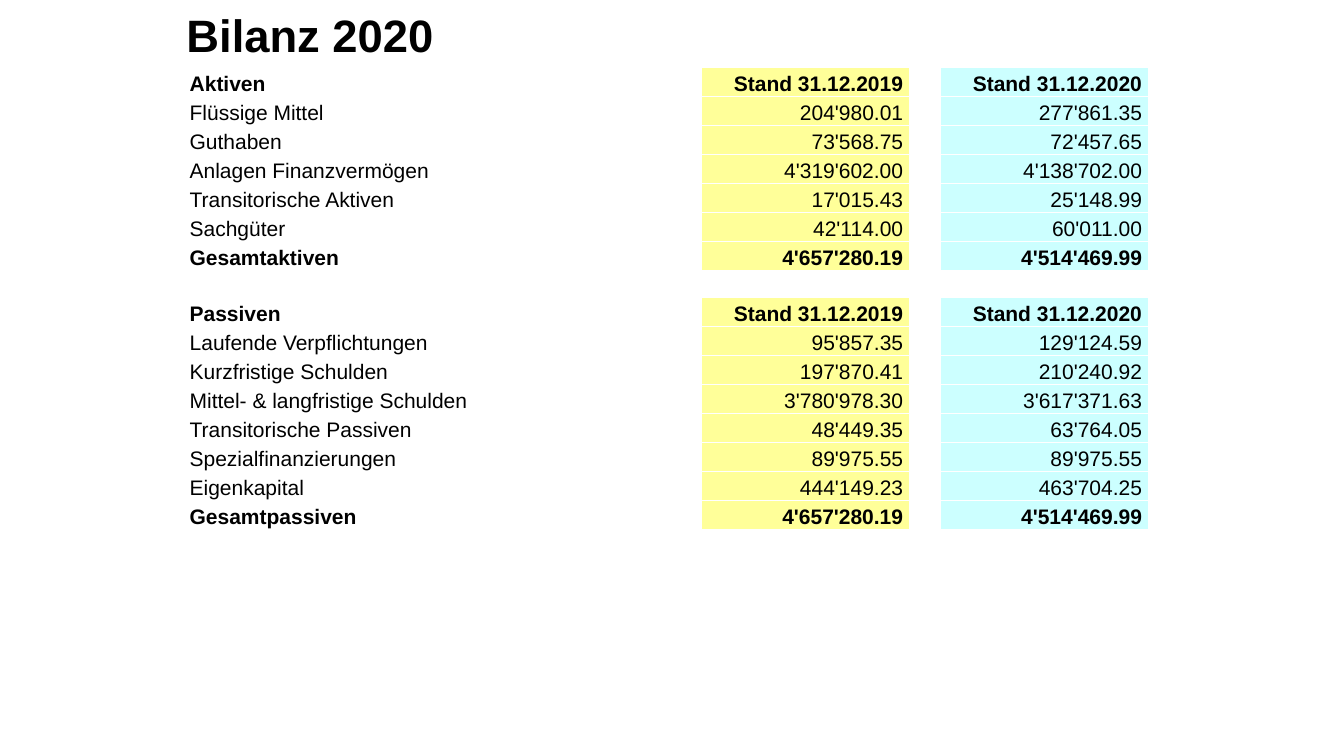
from dataclasses import dataclass

from lxml import etree
from pptx import Presentation
from pptx import util as u
from pptx.dml.color import RGBColor
from pptx.enum import text
from pptx.oxml import ns

BLACK = RGBColor(0x00, 0x00, 0x00)
WHITE = RGBColor(0xFF, 0xFF, 0xFF)
YELLOW = RGBColor(0xFF, 0xFF, 0x99)
CYAN = RGBColor(0xCC, 0xFF, 0xFF)
FONT = "Arial"
BODY_SIZE = u.Pt(15)
ROW_HEIGHT = u.Cm(0.68)


@dataclass(frozen=True)
class Column:
    width: float
    fill: RGBColor | None
    alignment: text.PP_ALIGN


@dataclass(frozen=True)
class BalanceRow:
    label: str = ""
    previous: str = ""
    current: str = ""
    bold: bool = False

    def cell_texts(self) -> tuple[str, str, str, str]:
        return self.label, self.previous, "", self.current


COLUMNS = [
    Column(13.08, None, text.PP_ALIGN.LEFT),
    Column(5.26, YELLOW, text.PP_ALIGN.RIGHT),
    Column(0.76, None, text.PP_ALIGN.LEFT),
    Column(5.26, CYAN, text.PP_ALIGN.RIGHT),
]


def heading(label: str) -> BalanceRow:
    return BalanceRow(label, "Stand 31.12.2019", "Stand 31.12.2020", True)


def total(label: str) -> BalanceRow:
    return BalanceRow(label, "4'657'280.19", "4'514'469.99", True)


ROWS = [
    heading("Aktiven"),
    BalanceRow("Flüssige Mittel", "204'980.01", "277'861.35"),
    BalanceRow("Guthaben", "73'568.75", "72'457.65"),
    BalanceRow("Anlagen Finanzvermögen", "4'319'602.00", "4'138'702.00"),
    BalanceRow("Transitorische Aktiven", "17'015.43", "25'148.99"),
    BalanceRow("Sachgüter", "42'114.00", "60'011.00"),
    total("Gesamtaktiven"),
    BalanceRow(),
    heading("Passiven"),
    BalanceRow("Laufende Verpflichtungen", "95'857.35", "129'124.59"),
    BalanceRow("Kurzfristige Schulden", "197'870.41", "210'240.92"),
    BalanceRow("Mittel- & langfristige Schulden", "3'780'978.30", "3'617'371.63"),
    BalanceRow("Transitorische Passiven", "48'449.35", "63'764.05"),
    BalanceRow("Spezialfinanzierungen", "89'975.55", "89'975.55"),
    BalanceRow("Eigenkapital", "444'149.23", "463'704.25"),
    total("Gesamtpassiven"),
]


def format_runs(paragraph, size: u.Length, bold: bool) -> None:
    for run in paragraph.runs:
        run.font.name = FONT
        run.font.size = size
        run.font.bold = bold
        run.font.color.rgb = BLACK


def add_borders(cell) -> None:
    properties = cell._tc.get_or_add_tcPr()
    for side in ("a:lnL", "a:lnR", "a:lnT", "a:lnB"):
        line = etree.SubElement(properties, ns.qn(side), w=str(u.Pt(1.5)))
        solid = etree.SubElement(line, ns.qn("a:solidFill"))
        etree.SubElement(solid, ns.qn("a:srgbClr"), val=str(WHITE))


def format_cell(cell, content: str, column: Column, row: BalanceRow) -> None:
    cell.vertical_anchor = text.MSO_ANCHOR.MIDDLE
    cell.margin_left = cell.margin_right = u.Cm(0.18)
    cell.margin_top = cell.margin_bottom = 0
    add_borders(cell)
    if column.fill is not None and row.label:
        cell.fill.solid()
        cell.fill.fore_color.rgb = column.fill
    else:
        cell.fill.background()

    paragraph = cell.text_frame.paragraphs[0]
    if content:
        paragraph.text = content
        paragraph.alignment = column.alignment
        paragraph.line_spacing = 1.15
        paragraph.space_after = u.Pt(10)
        format_runs(paragraph, BODY_SIZE, row.bold)
    else:
        # Keep empty cells from stretching their row
        etree.SubElement(paragraph._p, ns.qn("a:endParaRPr"), sz="1000")


def add_title(slide) -> None:
    title = slide.shapes.add_textbox(u.Cm(4.45), u.Cm(0.2), u.Cm(28.3), u.Cm(1.5))
    frame = title.text_frame
    frame.word_wrap = True
    frame.vertical_anchor = text.MSO_ANCHOR.MIDDLE
    frame.text = "Bilanz 2020"
    paragraph = frame.paragraphs[0]
    paragraph.line_spacing = 0.9
    format_runs(paragraph, u.Pt(32.4), True)


def add_balance_table(slide) -> None:
    width = u.Cm(sum(column.width for column in COLUMNS))
    table = slide.shapes.add_table(
        len(ROWS), len(COLUMNS), u.Cm(4.6), u.Cm(1.7), width, ROW_HEIGHT * len(ROWS)
    ).table
    table.first_row = False
    table.horz_banding = False
    for table_column, column in zip(table.columns, COLUMNS):
        table_column.width = u.Cm(column.width)
    for table_row, row in zip(table.rows, ROWS):
        table_row.height = ROW_HEIGHT
        for cell, content, column in zip(table_row.cells, row.cell_texts(), COLUMNS):
            format_cell(cell, content, column, row)


def main() -> None:
    presentation = Presentation()
    presentation.slide_width = u.Cm(33.87)
    presentation.slide_height = u.Cm(19.05)
    slide = presentation.slides.add_slide(presentation.slide_layouts[6])
    add_title(slide)
    add_balance_table(slide)
    presentation.save("out.pptx")


if __name__ == "__main__":
    main()
